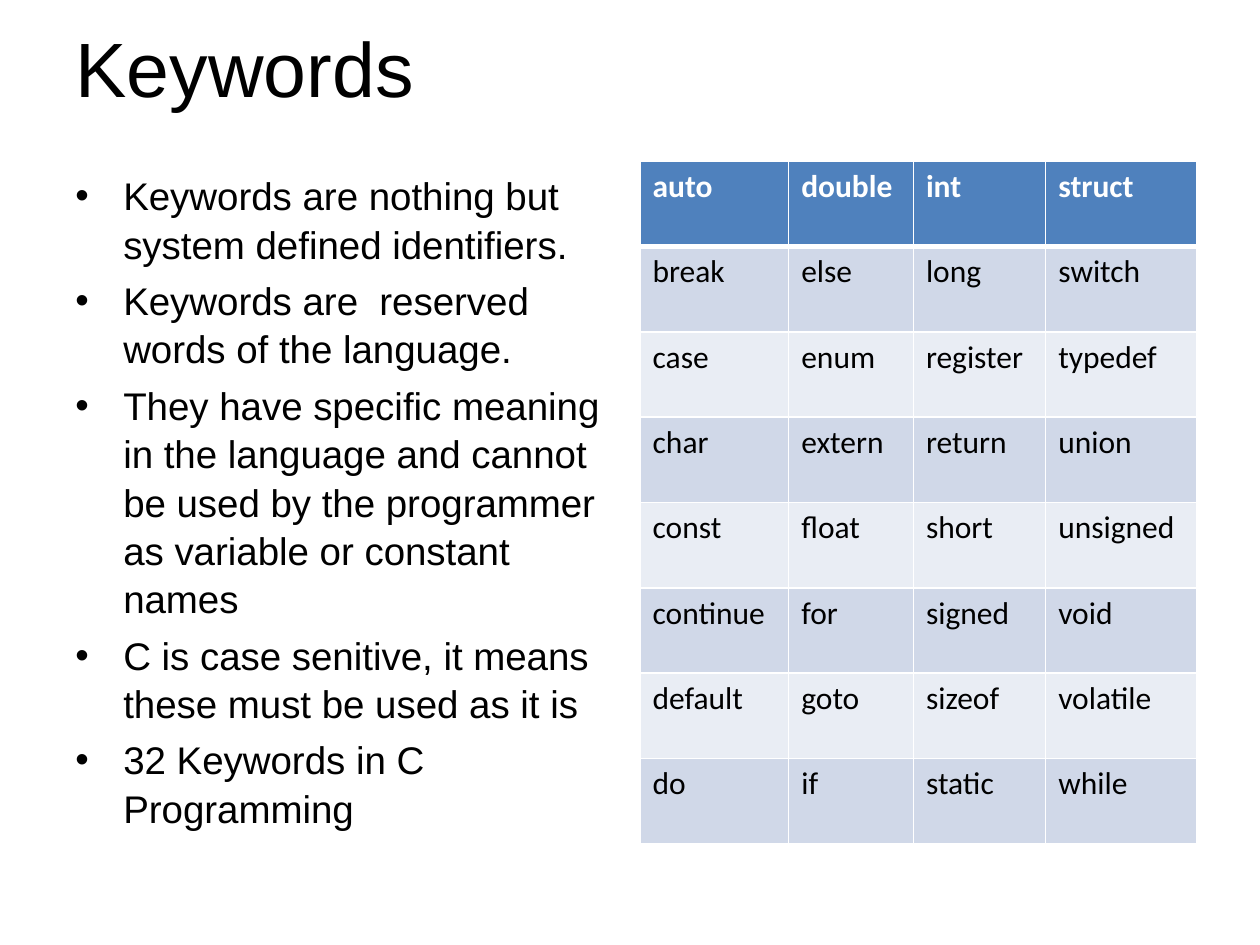
from lxml.etree import SubElement
from pptx import Presentation
from pptx.dml.color import RGBColor
from pptx.enum.text import MSO_ANCHOR, PP_ALIGN
from pptx.oxml.ns import qn
from pptx.util import Inches, Pt

BLACK = RGBColor(0x00, 0x00, 0x00)
WHITE = RGBColor(0xFF, 0xFF, 0xFF)
HEADER_BLUE = RGBColor(0x4F, 0x81, 0xBD)
BAND_DARK = RGBColor(0xD0, 0xD8, 0xE8)
BAND_LIGHT = RGBColor(0xE9, 0xED, 0xF4)

TITLE_FONT = {"name": "Arial", "size": Pt(44), "bold": False}
BULLET_FONT = {"name": "Arial", "size": Pt(22)}
HEADER_FONT = {"name": "Calibri", "size": Pt(18), "bold": True}
KEYWORD_FONT = {"name": "Calibri", "size": Pt(18), "bold": False}

FACTS = [
    "Keywords are nothing but system defined identifiers.",
    "Keywords are  reserved words of the language.",
    "They have specific meaning in the language and cannot be used by the "
    "programmer as variable or constant names",
    "C is case senitive, it means these must be used as it is",
    "32 Keywords in C Programming",
]
KEYWORDS = [
    ["auto", "double", "int", "struct"],
    ["break", "else", "long", "switch"],
    ["case", "enum", "register", "typedef"],
    ["char", "extern", "return", "union"],
    ["const", "float", "short", "unsigned"],
    ["continue", "for", "signed", "void"],
    ["default", "goto", "sizeof", "volatile"],
    ["do", "if", "static", "while"],
]
COLUMN_WIDTHS = [1.18, 0.99, 1.05, 1.2]
CONTENT_TOP, CONTENT_WIDTH, CONTENT_HEIGHT = Inches(1.28), Inches(4.42), Inches(5.42)


def format_font(font, values, color):
    for name, value in values.items():
        setattr(font, name, value)
    font.color.rgb = color


def set_title(slide, text):
    title = slide.shapes.title
    title.left, title.top = Inches(0.5), Inches(0.21)
    title.width, title.height = Inches(9), Inches(0.64)
    title.text_frame.text = text
    title.text_frame.vertical_anchor = MSO_ANCHOR.MIDDLE
    paragraph = title.text_frame.paragraphs[0]
    paragraph.alignment = PP_ALIGN.LEFT
    format_font(paragraph.font, TITLE_FONT, BLACK)


def add_bullet(paragraph):
    properties = paragraph._p.get_or_add_pPr()
    properties.set("marL", str(Inches(0.38)))
    properties.set("indent", str(-Inches(0.38)))
    SubElement(properties, qn("a:buFont"), typeface="Arial")
    SubElement(properties, qn("a:buChar"), char="•")


def add_bullet_list(slide, items):
    box = slide.shapes.add_textbox(Inches(0.5), CONTENT_TOP, CONTENT_WIDTH, CONTENT_HEIGHT)
    frame = box.text_frame
    frame.word_wrap = True
    frame.margin_top = Inches(0.07)
    frame.text = "\n".join(items)
    for index, paragraph in enumerate(frame.paragraphs):
        add_bullet(paragraph)
        paragraph.line_spacing = 1.05
        paragraph.space_before = Pt(4.4 if index else 0)
        format_font(paragraph.font, BULLET_FONT, BLACK)


def set_borders(cell, **widths):
    """Draw white borders, keyed by side tag and given in points."""
    properties = cell._tc.get_or_add_tcPr()
    for side, width in widths.items():
        line = SubElement(properties, qn(f"a:{side}"), w=str(Pt(width)))
        fill = SubElement(line, qn("a:solidFill"))
        SubElement(fill, qn("a:srgbClr"), val=str(WHITE))


def add_keyword_table(slide, rows):
    table = slide.shapes.add_table(
        len(rows), len(rows[0]), Inches(5.08), CONTENT_TOP, CONTENT_WIDTH, CONTENT_HEIGHT
    ).table
    for column, width in zip(table.columns, COLUMN_WIDTHS):
        column.width = Inches(width)
    for row_index, row in enumerate(rows):
        is_header = row_index == 0
        band = BAND_DARK if row_index % 2 else BAND_LIGHT
        for column_index, keyword in enumerate(row):
            cell = table.cell(row_index, column_index)
            cell.text = keyword
            format_font(
                cell.text_frame.paragraphs[0].font,
                HEADER_FONT if is_header else KEYWORD_FONT,
                WHITE if is_header else BLACK,
            )
            set_borders(cell, lnL=1, lnR=1, lnT=3 if row_index == 1 else 1,
                        lnB=3 if is_header else 1)
            cell.fill.solid()
            cell.fill.fore_color.rgb = HEADER_BLUE if is_header else band


def main():
    presentation = Presentation()
    presentation.slide_width, presentation.slide_height = Inches(10), Inches(7.5)
    slide = presentation.slides.add_slide(presentation.slide_layouts[5])
    set_title(slide, "Keywords")
    add_bullet_list(slide, FACTS)
    add_keyword_table(slide, KEYWORDS)
    presentation.save("out.pptx")


if __name__ == "__main__":
    main()
